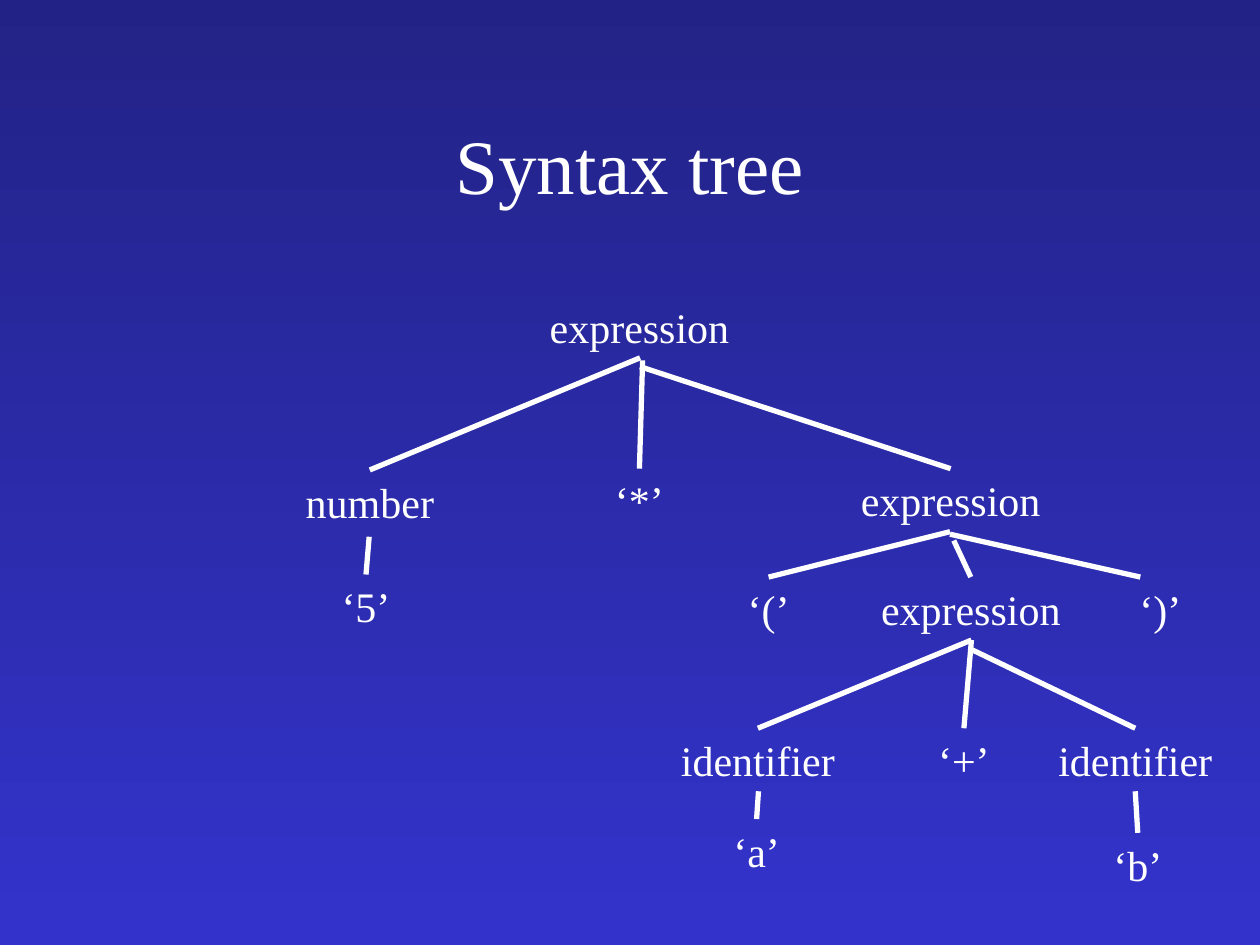
"""Build a slide showing the syntax tree of an expression."""
from lxml import etree
from pptx import Presentation
from pptx.dml.color import RGBColor
from pptx.enum.shapes import MSO_CONNECTOR
from pptx.enum.text import MSO_ANCHOR, MSO_AUTO_SIZE, PP_ALIGN
from pptx.oxml.ns import qn
from pptx.util import Inches, Pt

STRAIGHT = MSO_CONNECTOR.STRAIGHT
CENTER = PP_ALIGN.CENTER
MIDDLE, TOP = MSO_ANCHOR.MIDDLE, MSO_ANCHOR.TOP
GROW, FIXED = MSO_AUTO_SIZE.SHAPE_TO_FIT_TEXT, MSO_AUTO_SIZE.NONE
WHITE = "FFFFFF"
NODE_HEIGHT = 0.5


def color(value):
    return RGBColor.from_string(value)


def add_text(page, text, place, size, frame_format):
    box = page.shapes.add_textbox(*[Inches(length) for length in place])
    for name, value in frame_format.items():
        setattr(box.text_frame, name, value)
    para = box.text_frame.paragraphs[0]
    para.alignment = CENTER
    span = para.add_run()
    span.text = text
    span.font.color.rgb = color(WHITE)
    for name, value in {"name": "Times New Roman", "size": Pt(size)}.items():
        setattr(span.font, name, value)


deck = Presentation()
deck.slide_width, deck.slide_height = Inches(10), Inches(7.5)
page = deck.slides.add_slide(deck.slide_layouts[6])

backdrop = page.background.fill
backdrop.gradient()
backdrop.gradient_angle = 270
for stop, position, value in zip(backdrop.gradient_stops, (0, 1), ("222286", "3333CC")):
    stop.position = position
    stop.color.rgb = color(value)

title_format = {"word_wrap": True, "auto_size": FIXED, "vertical_anchor": MIDDLE}
node_format = {"word_wrap": True, "auto_size": GROW, "vertical_anchor": TOP}
add_text(page, "Syntax tree", (0.75, 0.67, 8.5, 1.25), 44, title_format)

nodes = {
    "root": ("expression", 3.98, 2.34, 2.19),
    "number": ("number", 1.84, 3.73, 2.19),
    "factor": ("expression", 6.45, 3.72, 2.19),
    "times": ("‘*’", 3.98, 3.72, 2.19),
    "first": ("identifier", 4.92, 5.78, 2.19),
    "sum": ("expression", 6.61, 4.58, 2.19),
    "open": ("‘(’", 5.39, 4.58, 1.42),
    "close": ("‘)’", 8.56, 4.58, 1.3),
    "plus": ("‘+’", 7.11, 5.78, 1.08),
    "second": ("identifier", 8.15, 5.78, 1.72),
    "a": ("‘a’", 4.91, 6.5, 2.19),
    "b": ("‘b’", 8.04, 6.61, 1.98),
    "five": ("‘5’", 1.81, 4.56, 2.19),
}
for text, left, top, width in nodes.values():
    add_text(page, text, (left, top, width, NODE_HEIGHT), 24, node_format)

branches = [
    (5.08, 2.84, "number", 0),
    (5.1, 2.86, "times", 0),
    (5.08, 2.91, "factor", 0),
    (7.54, 4.22, "open", 0),
    (7.57, 4.29, "sum", 0),
    (7.54, 4.24, "close", -0.16),
    (7.71, 5.08, "plus", 0),
    (7.7, 5.15, "second", 0),
    (7.71, 5.08, "first", 0),
    (2.93, 4.26, "five", 0),
    (6.02, 6.28, "a", 0),
    (9.01, 6.28, "b", 0),
]
for start_x, start_y, child, shift in branches:
    text, left, top, width = nodes[child]
    ends = (start_x, start_y, left + width / 2 + shift, top)
    branch = page.shapes.add_connector(STRAIGHT, *[Inches(length) for length in ends])
    branch.line.color.rgb = color(WHITE)
    branch.line.width = Pt(3)
    etree.SubElement(branch._element.spPr, qn("a:effectLst"))

deck.save("out.pptx")
